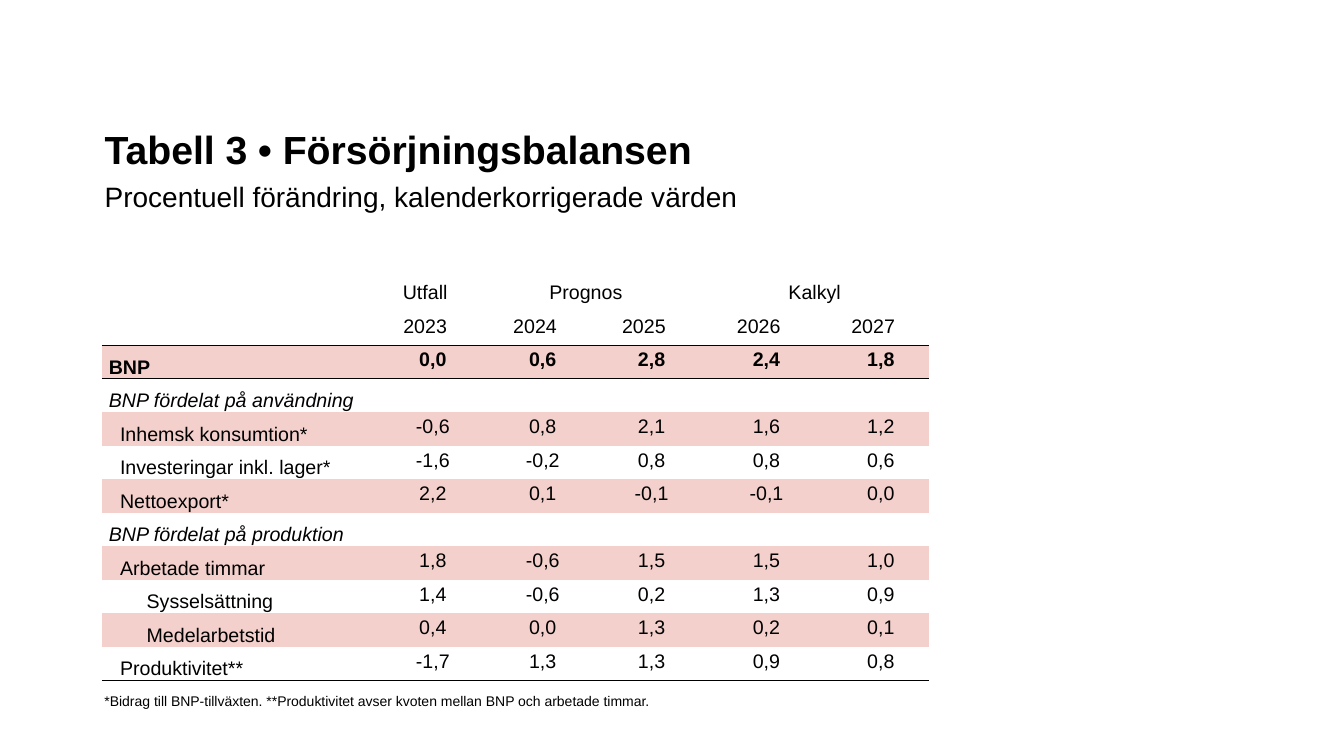
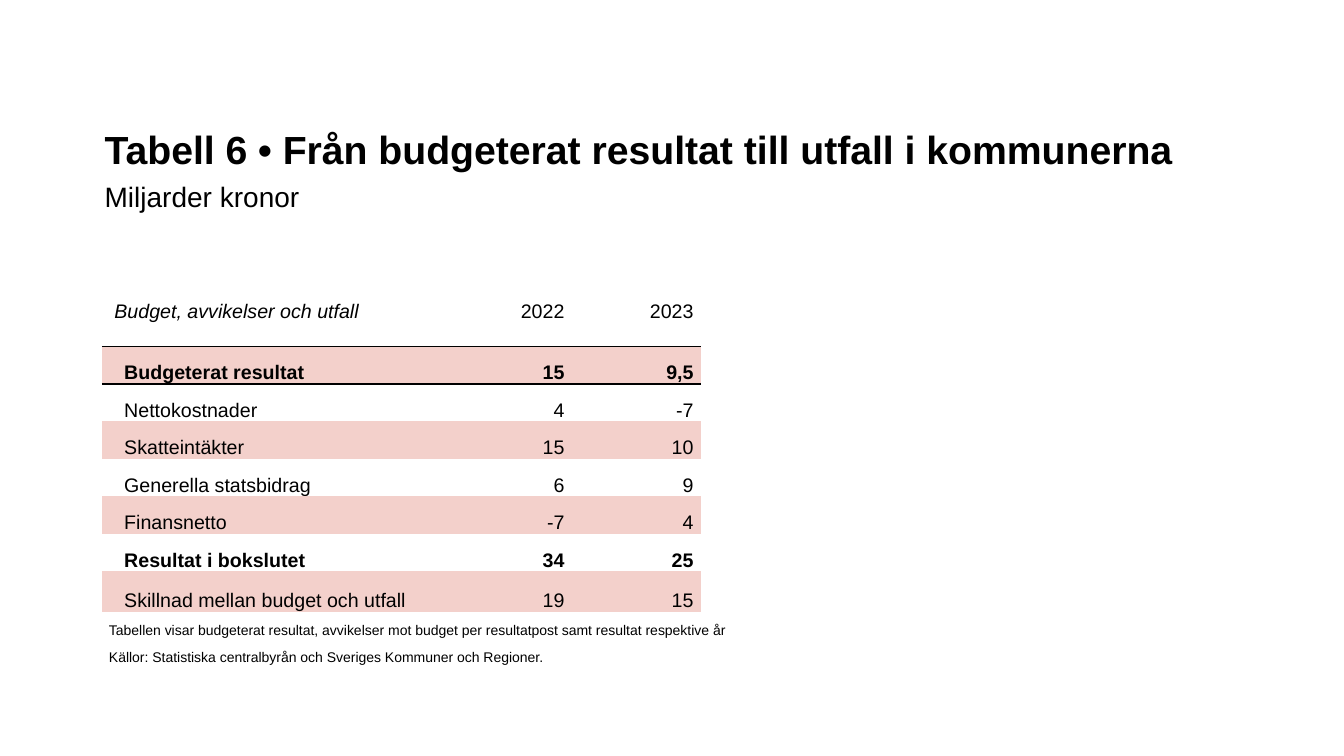
from dataclasses import dataclass

from pptx import Presentation
from pptx.dml.color import RGBColor
from pptx.enum.text import MSO_ANCHOR, MSO_AUTO_SIZE, PP_ALIGN
from pptx.oxml import parse_xml
from pptx.oxml.ns import nsdecls, qn
from pptx.presentation import Presentation as Deck
from pptx.slide import Slide
from pptx.table import _Cell as Cell
from pptx.text.text import _Paragraph as Paragraph
from pptx.util import Pt

COLOURS = {"text": "000000", "rule": "000000", "band": "F3D0CB"}
FONT = "Arial"
TITLE_SIZE, SUBTITLE_SIZE, TABLE_SIZE, NOTE_SIZE = 28, 20, 14, 10
TABLE_LEFT = 72.75
CELL_MARGIN = 5
VALUE_INDENT = 11
NO_TABLE_STYLE = "{2D5ABB26-0587-4C30-8999-92F81FD0307C}"


@dataclass(frozen=True)
class Row:
    label: str
    values: str = ""
    indent: float = 0
    bold: bool = False
    italic: bool = False


@dataclass(frozen=True)
class Group:
    text: str
    first: int
    last: int
    right_margin: float = CELL_MARGIN


@dataclass(frozen=True)
class Note:
    text: str
    left: float
    top: float
    width: float


@dataclass(frozen=True)
class TableSlide:
    title: str
    subtitle: str
    top: float
    column_widths: list[float]
    row_heights: list[float]
    groups: list[Group]
    header: Row
    body: list[Row]
    value_align: PP_ALIGN
    value_anchor: MSO_ANCHOR
    closing_rule: bool
    notes: list[Note]


SLIDES = [
    TableSlide(
        title="Tabell 3 • Försörjningsbalansen",
        subtitle="Procentuell förändring, kalenderkorrigerade värden",
        top=198.7,
        column_widths=[190, 82, 75, 80.6, 83.5, 79.9],
        row_heights=[23.94] * 12,
        groups=[
            Group("Utfall", 1, 1),
            Group("Prognos", 2, 3, CELL_MARGIN + 8),
            Group("Kalkyl", 4, 5),
        ],
        header=Row("", "2023 2024 2025 2026 2027"),
        body=[
            Row("BNP", "0,0 0,6 2,8 2,4 1,8", bold=True),
            Row("BNP fördelat på användning", italic=True),
            Row("Inhemsk konsumtion*", "-0,6 0,8 2,1 1,6 1,2", 8),
            Row("Investeringar inkl. lager*", "-1,6 -0,2 0,8 0,8 0,6", 8),
            Row("Nettoexport*", "2,2 0,1 -0,1 -0,1 0,0", 8),
            Row("BNP fördelat på produktion", italic=True),
            Row("Arbetade timmar", "1,8 -0,6 1,5 1,5 1,0", 8),
            Row("Sysselsättning", "1,4 -0,6 0,2 1,3 0,9", 27),
            Row("Medelarbetstid", "0,4 0,0 1,3 0,2 0,1", 27),
            Row("Produktivitet**", "-1,7 1,3 1,3 0,9 0,8", 8),
        ],
        value_align=PP_ALIGN.CENTER,
        value_anchor=MSO_ANCHOR.MIDDLE,
        closing_rule=True,
        notes=[
            Note(
                "*Bidrag till BNP-tillväxten. **Produktivitet avser kvoten "
                "mellan BNP och arbetade timmar.",
                67.5, 491, 411,
            ),
        ],
    ),
    TableSlide(
        title="Tabell 6 • Från budgeterat resultat till utfall i kommunerna",
        subtitle="Miljarder kronor",
        top=200.9,
        column_widths=[234.7, 100.8, 92.2],
        row_heights=[46.6] + [26.8] * 6 + [29],
        groups=[],
        header=Row("Budget, avvikelser och utfall", "2022 2023", 4, italic=True),
        body=[
            Row("Budgeterat resultat", "15 9,5", 11, bold=True),
            Row("Nettokostnader", "4 -7", 11),
            Row("Skatteintäkter", "15 10", 11),
            Row("Generella statsbidrag", "6 9", 11),
            Row("Finansnetto", "-7 4", 11),
            Row("Resultat i bokslutet", "34 25", 11, bold=True),
            Row("Skillnad mellan budget och utfall", "19 15", 11),
        ],
        value_align=PP_ALIGN.RIGHT,
        value_anchor=MSO_ANCHOR.BOTTOM,
        closing_rule=False,
        notes=[
            Note(
                "Tabellen visar budgeterat resultat, avvikelser mot budget per "
                "resultatpost samt resultat respektive år",
                70.75, 440.5, 484,
            ),
            Note(
                "Källor: Statistiska centralbyrån och Sveriges Kommuner och Regioner.",
                70.75, 459.5, 480,
            ),
        ],
    ),
]


def add_span(
    para: Paragraph, text: str, size: float, bold: bool = False, italic: bool = False
) -> None:
    span = para.add_run()
    span.text = text
    span.font.name = FONT
    span.font.size = Pt(size)
    span.font.bold = bold
    span.font.italic = italic
    span.font.color.rgb = RGBColor.from_string(COLOURS["text"])


def style_master_title(deck: Deck) -> None:
    level = deck.slide_master.element.find(f".//{qn('p:titleStyle')}/{qn('a:lvl1pPr')}")
    level.set("algn", "l")
    level.find(qn("a:defRPr")).set("sz", str(TITLE_SIZE * 100))


def add_title(page: Slide, title: str, subtitle: str) -> None:
    box = page.shapes.title
    box.left, box.top, box.width, box.height = Pt(67.5), Pt(58.5), Pt(814.5), Pt(97)
    frame = box.text_frame
    frame.word_wrap = True
    frame.auto_size = MSO_AUTO_SIZE.NONE
    frame.vertical_anchor = MSO_ANCHOR.BOTTOM
    para = frame.paragraphs[0]
    para.line_spacing = 1.2
    para.space_after = Pt(4)
    add_span(para, title, TITLE_SIZE, bold=True)
    para.add_line_break()
    add_span(para, subtitle, SUBTITLE_SIZE)


def add_rule(cell: Cell, side: str) -> None:
    line = parse_xml(
        f'<a:{side} {nsdecls("a")} w="{Pt(1)}"><a:solidFill>'
        f'<a:srgbClr val="{COLOURS["rule"]}"/></a:solidFill></a:{side}>'
    )
    cell._tc.get_or_add_tcPr().insert(0, line)


def format_cell(cell: Cell, shaded: bool) -> None:
    cell.margin_left = cell.margin_right = Pt(CELL_MARGIN)
    cell.margin_top = cell.margin_bottom = 0
    if shaded:
        cell.fill.solid()
        cell.fill.fore_color.rgb = RGBColor.from_string(COLOURS["band"])
    else:
        cell.fill.background()
    para = cell.text_frame.paragraphs[0]
    para.line_spacing = Pt(13)
    para.space_after = Pt(1)


def write_cell(
    cell: Cell,
    text: str,
    align: PP_ALIGN,
    anchor: MSO_ANCHOR,
    indent: float = 0,
    bold: bool = False,
    italic: bool = False,
) -> None:
    cell.vertical_anchor = anchor
    para = cell.text_frame.paragraphs[0]
    para.alignment = align
    para._p.get_or_add_pPr().set("indent", str(Pt(indent)))
    if text:
        add_span(para, text, TABLE_SIZE, bold, italic)


def add_data_table(page: Slide, content: TableSlide) -> None:
    widths, heights = content.column_widths, content.row_heights
    holder = page.shapes.add_table(
        len(heights), len(widths),
        Pt(TABLE_LEFT), Pt(content.top), Pt(sum(widths)), Pt(sum(heights)),
    )
    table = holder.table
    table.first_row = table.horz_banding = False
    for style in holder.element.iter(qn("a:tableStyleId")):
        style.text = NO_TABLE_STYLE
    for column, width in zip(table.columns, widths):
        column.width = Pt(width)
    for row, height in zip(table.rows, heights):
        row.height = Pt(height)

    header_index = 1 if content.groups else 0
    first_body = header_index + 1
    for row_index, row in enumerate(table.rows):
        for cell in row.cells:
            format_cell(cell, row_index >= first_body and (row_index - first_body) % 2 == 0)

    for group in content.groups:
        cell = table.cell(0, group.first)
        if group.last > group.first:
            cell.merge(table.cell(0, group.last))
        cell.margin_right = Pt(group.right_margin)
        write_cell(cell, group.text, PP_ALIGN.CENTER, MSO_ANCHOR.MIDDLE)

    for row_index, row in enumerate([content.header, *content.body], header_index):
        is_header = row_index == header_index
        write_cell(
            table.cell(row_index, 0), row.label, PP_ALIGN.LEFT,
            MSO_ANCHOR.MIDDLE if is_header else MSO_ANCHOR.BOTTOM,
            row.indent, row.bold, row.italic,
        )
        for column_index, value in enumerate(row.values.split(), 1):
            write_cell(
                table.cell(row_index, column_index), value, content.value_align,
                MSO_ANCHOR.MIDDLE if is_header else content.value_anchor,
                0 if is_header else VALUE_INDENT, row.bold,
            )

    for column_index in range(len(widths)):
        add_rule(table.cell(header_index, column_index), "lnB")
        add_rule(table.cell(first_body, column_index), "lnT")
        if content.closing_rule:
            add_rule(table.cell(len(heights) - 1, column_index), "lnB")


def add_note(page: Slide, note: Note) -> None:
    box = page.shapes.add_textbox(Pt(note.left), Pt(note.top), Pt(note.width), Pt(19.4))
    box.text_frame.word_wrap = True
    add_span(box.text_frame.paragraphs[0], note.text, NOTE_SIZE)


def main() -> None:
    deck = Presentation()
    deck.slide_width, deck.slide_height = Pt(960), Pt(540)
    style_master_title(deck)
    for content in SLIDES:
        page = deck.slides.add_slide(deck.slide_layouts[5])
        add_title(page, content.title, content.subtitle)
        add_data_table(page, content)
        for note in content.notes:
            add_note(page, note)
    deck.save("out.pptx")


if __name__ == "__main__":
    main()
